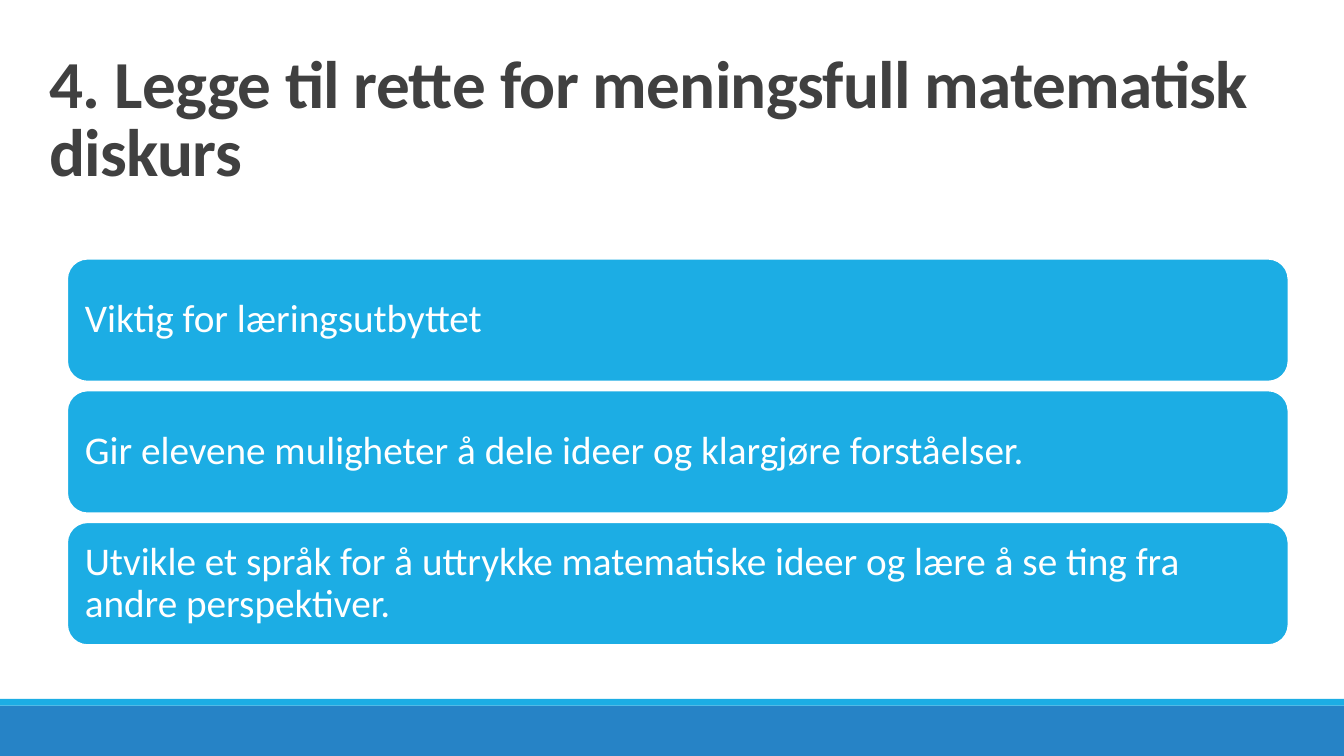
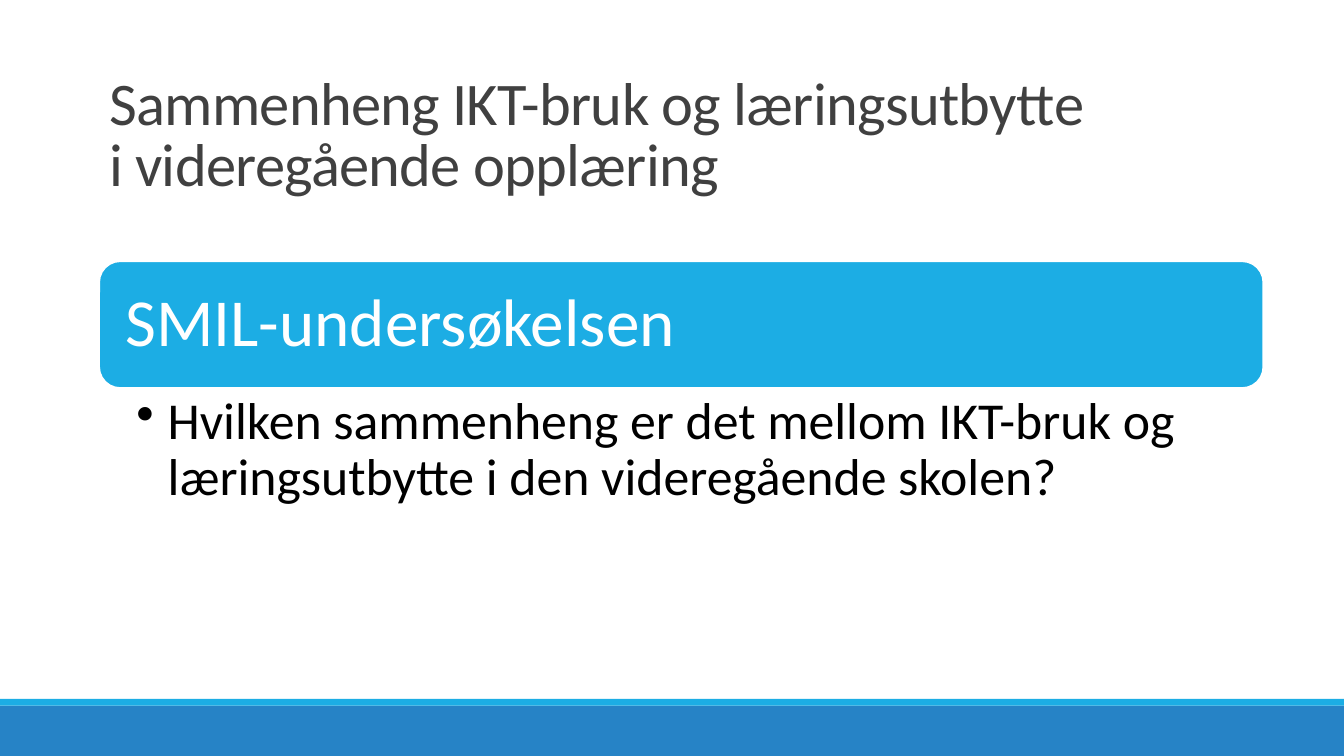
from dataclasses import dataclass

from lxml import etree
from pptx import Presentation
from pptx.dml.color import RGBColor
from pptx.enum.shapes import MSO_SHAPE
from pptx.enum.text import MSO_ANCHOR, MSO_AUTO_SIZE, PP_ALIGN
from pptx.oxml.ns import qn
from pptx.util import Inches, Pt

RECT, ROUNDED = MSO_SHAPE.RECTANGLE, MSO_SHAPE.ROUNDED_RECTANGLE
TOP, MIDDLE, BOTTOM = MSO_ANCHOR.TOP, MSO_ANCHOR.MIDDLE, MSO_ANCHOR.BOTTOM
LEFT = PP_ALIGN.LEFT
NO_FIT = MSO_AUTO_SIZE.NONE

CELL = Pt(6)
COLUMNS, ROWS = 160, 90
TITLE_ONLY = 5


@dataclass(frozen=True)
class Theme:
    font: str = "Calibri"
    heading: RGBColor = RGBColor(0x40, 0x40, 0x40)
    body: RGBColor = RGBColor(0x00, 0x00, 0x00)
    light: RGBColor = RGBColor(0xFF, 0xFF, 0xFF)
    accent: RGBColor = RGBColor(0x1C, 0xAD, 0xE4)
    base: RGBColor = RGBColor(0x26, 0x83, 0xC6)
    title_size: float = 48
    small_title_size: float = 43.2
    card_size: float = 28
    large_card_size: float = 48
    bullet_size: float = 37
    title_spacing: float = 0.85
    body_spacing: float = 0.9
    title_tracking: str = "-50"


def assign(target, values):
    for name, value in values.items():
        setattr(target, name, value)


def cells(*counts):
    """Turn counts of grid cells into lengths."""
    return [round(count * CELL) for count in counts]


class Deck:
    """Holds the theme, the presentation and the slide being filled."""

    def __init__(self, theme):
        self.theme = theme
        self.file = Presentation()
        self.file.slide_width, self.file.slide_height = cells(COLUMNS, ROWS)
        self.layout = self.file.slide_layouts[TITLE_ONLY]
        self.slide = None

    def add_slide(self):
        self.slide = self.file.slides.add_slide(self.layout)

    def put_text(self, frame, text, size, color, spacing, frame_format, bold=False):
        assign(frame, {"word_wrap": True, "auto_size": NO_FIT, **frame_format})
        paragraph = frame.paragraphs[0]
        assign(paragraph, {"alignment": LEFT, "line_spacing": spacing})
        run = paragraph.add_run()
        run.text = text
        assign(run.font, {"name": self.theme.font, "size": Pt(size), "bold": bold})
        run.font.color.rgb = color
        return paragraph

    def title(self, box, text, size, bold=False):
        placeholder = self.slide.shapes.title
        assign(placeholder, dict(zip(("left", "top", "width", "height"), cells(*box))))
        paragraph = self.put_text(
            placeholder.text_frame, text, size, self.theme.heading,
            self.theme.title_spacing, {"vertical_anchor": BOTTOM}, bold)
        paragraph.runs[0]._r.get_or_add_rPr().set("spc", self.theme.title_tracking)

    def block(self, kind, box, color):
        shape = self.slide.shapes.add_shape(kind, *cells(*box))
        shape.shadow.inherit = False
        shape.fill.solid()
        shape.fill.fore_color.rgb = color
        shape.line.fill.background()
        return shape

    def layout_bands(self):
        """Move two bottom bands from the current slide to its layout."""
        bands = [((0, 84, COLUMNS, 6), self.theme.base),
                 ((0, 83.2, COLUMNS, 0.8), self.theme.accent)]
        for number, (box, color) in enumerate(bands):
            band = self.block(RECT, box, color).element
            band.xpath(".//p:cNvPr")[0].set("id", str(100 + number))
            self.layout.shapes.element.insert(2 + number, band)

    def card(self, box, text, size):
        shape = self.block(ROUNDED, box, self.theme.accent)
        shape.line.color.rgb = self.theme.light
        shape.line.width = Pt(1.25)
        inset = Pt(size * 0.3)
        sides = ("margin_left", "margin_top", "margin_right", "margin_bottom")
        self.put_text(shape.text_frame, text, size, self.theme.light, self.theme.body_spacing,
                      {"vertical_anchor": MIDDLE, **dict.fromkeys(sides, inset)})

    def card_stack(self, box, texts, gap):
        """Share the box's height equally between the cards."""
        left, top, width, height = box
        card_height = (height - gap * (len(texts) - 1)) / len(texts)
        for index, text in enumerate(texts):
            card_top = top + index * (card_height + gap)
            self.card((left, card_top, width, card_height), text, self.theme.card_size)

    def bullet(self, box, text):
        frame = self.slide.shapes.add_textbox(*cells(*box)).text_frame
        paragraph = self.put_text(
            frame, text, self.theme.bullet_size, self.theme.body, self.theme.body_spacing,
            {"vertical_anchor": TOP, "margin_left": Inches(0.37), "margin_right": Inches(0.37),
             "margin_top": Inches(0.07), "margin_bottom": Inches(0.07)})
        properties = paragraph._p.get_or_add_pPr()
        indent = Inches(0.31)
        properties.set("marL", str(indent))
        properties.set("indent", str(-indent))
        etree.SubElement(properties, qn("a:buChar")).set("char", "•")


def discourse_slide(deck):
    deck.add_slide()
    deck.layout_bands()
    deck.title((4.7, 4.2, 157.7, 19.1), "4. Legge til rette for meningsfull matematisk diskurs",
               deck.theme.title_size, bold=True)
    deck.card_stack((8, 30.8, 145.4, 46), [
        "Viktig for læringsutbyttet",
        "Gir elevene muligheter å dele ideer og klargjøre forståelser.",
        "Utvikle et språk for å uttrykke matematiske ideer og lære å se ting fra "
        "andre perspektiver.",
    ], gap=1.05)


def survey_slide(deck):
    left, width, card_top, card_height = 11.8, 138.6, 31.1, 15.1
    deck.add_slide()
    deck.title((left, 5.2, 120, 19.1),
               "Sammenheng IKT-bruk og læringsutbytte i videregående opplæring",
               deck.theme.small_title_size)
    deck.card((left, card_top, width, card_height), "SMIL-undersøkelsen",
              deck.theme.large_card_size)
    deck.bullet((left, card_top + card_height, width, 15.4),
                "Hvilken sammenheng er det mellom IKT-bruk og læringsutbytte "
                "i den videregående skolen?")


def main():
    deck = Deck(Theme())
    discourse_slide(deck)
    survey_slide(deck)
    deck.file.save("out.pptx")


if __name__ == "__main__":
    main()
